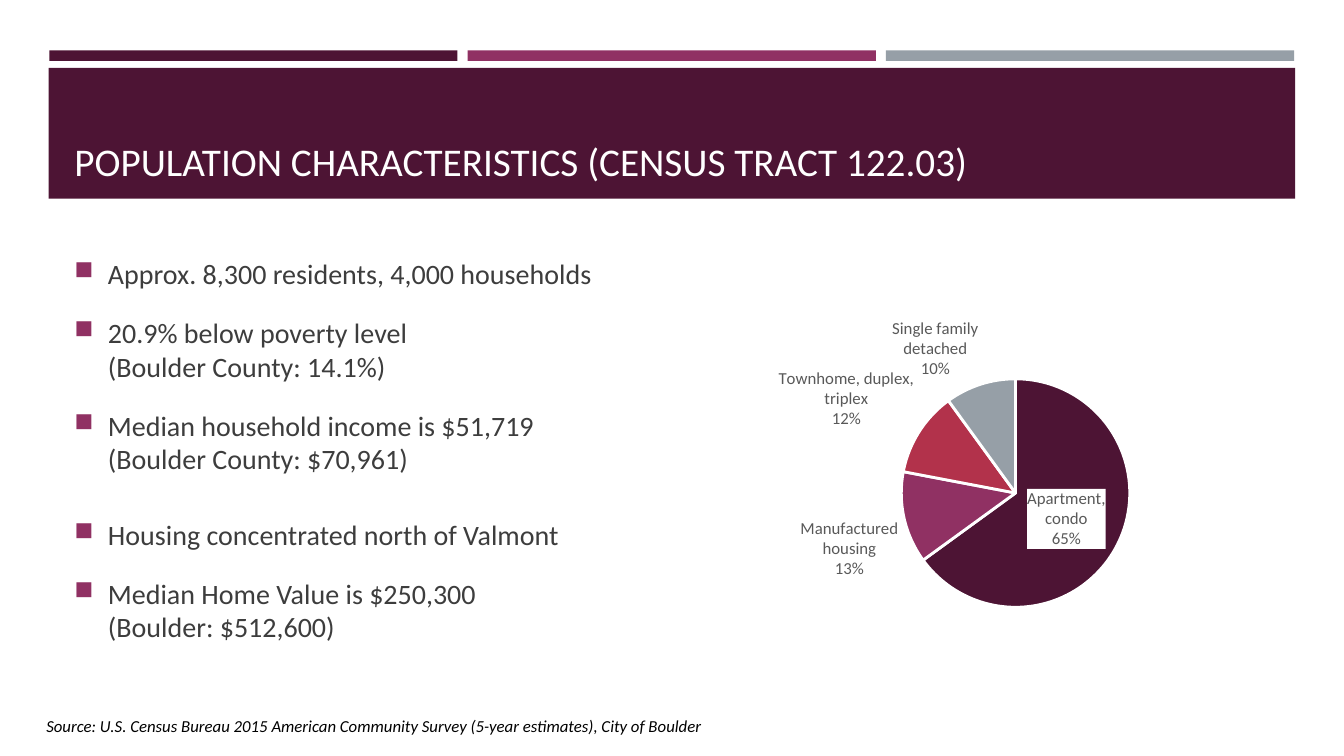
"""Build the population characteristics slide for one census tract."""
from dataclasses import dataclass

from lxml.etree import SubElement
from pptx import Presentation
from pptx.chart.data import CategoryChartData
from pptx.dml.color import RGBColor
from pptx.enum.chart import XL_CHART_TYPE, XL_LABEL_POSITION
from pptx.enum.shapes import MSO_SHAPE
from pptx.enum.text import MSO_ANCHOR
from pptx.oxml import parse_xml
from pptx.oxml.ns import nsdecls, qn
from pptx.util import Pt


@dataclass(frozen=True)
class Theme:
    font: str = "Calibri"
    plum: RGBColor = RGBColor(0x4D, 0x14, 0x34)
    magenta: RGBColor = RGBColor(0x90, 0x31, 0x63)
    red: RGBColor = RGBColor(0xB2, 0x32, 0x4B)
    grey: RGBColor = RGBColor(0x96, 0x9F, 0xA7)
    white: RGBColor = RGBColor(0xFF, 0xFF, 0xFF)
    black: RGBColor = RGBColor(0, 0, 0)
    body: RGBColor = RGBColor(0x3D, 0x3D, 0x3D)
    label: RGBColor = RGBColor(0x59, 0x59, 0x59)
    title_size: int = 28
    body_size: int = 20
    small_size: int = 12


class SlideBuilder:
    def __init__(self, slide, theme):
        self.slide = slide
        self.theme = theme

    def style(self, font, size, color, italic=False):
        font.name = self.theme.font
        font.size = Pt(size)
        font.color.rgb = color
        font.italic = italic

    def bar(self, left, top, width, height, color):
        bar = self.slide.shapes.add_shape(
            MSO_SHAPE.RECTANGLE, Pt(left), Pt(top), Pt(width), Pt(height))
        bar.shadow.inherit = False
        bar.fill.solid()
        bar.fill.fore_color.rgb = color
        bar.line.fill.background()

    def title(self, text, left, top, width, height):
        title = self.slide.shapes.title
        title.left, title.top = Pt(left), Pt(top)
        title.width, title.height = Pt(width), Pt(height)
        self.slide.shapes._spTree.append(title._element)
        title.text_frame.text = text
        title.text_frame.vertical_anchor = MSO_ANCHOR.BOTTOM
        heading = title.text_frame.paragraphs[0]
        heading.alignment = 1
        self.style(heading.font, self.theme.title_size, self.theme.white)

    def text_frame(self, left, top, width, height, anchor):
        frame = self.slide.shapes.add_textbox(
            Pt(left), Pt(top), Pt(width), Pt(height)).text_frame
        frame.word_wrap = True
        frame.vertical_anchor = anchor
        return frame

    def note(self, text, *place):
        note = self.text_frame(*place, MSO_ANCHOR.TOP).paragraphs[0]
        note.text = text
        self.style(note.font, self.theme.small_size, self.theme.black, italic=True)

    def bullets(self, items, *place):
        frame = self.text_frame(*place, MSO_ANCHOR.MIDDLE)
        for index, (text, space_before) in enumerate(items):
            item = frame.add_paragraph() if index else frame.paragraphs[0]
            item.text = text
            item.space_before, item.space_after = Pt(space_before), Pt(6)
            properties = item._p.get_or_add_pPr()
            properties.set("marL", str(Pt(24)))
            properties.set("indent", str(Pt(-24)))
            bullet_color = SubElement(properties, qn("a:buClr"))
            SubElement(bullet_color, qn("a:srgbClr"), val=str(self.theme.magenta))
            SubElement(properties, qn("a:buSzPct"), val="92000")
            SubElement(properties, qn("a:buChar"), char="■")
            self.style(item.font, self.theme.body_size, self.theme.body)

    def pie(self, slices, plot_box, *place):
        data = CategoryChartData(number_format="General")
        data.categories = [name for name, _, _ in slices]
        data.add_series("Series 1", [share for _, share, _ in slices])
        chart = self.slide.shapes.add_chart(
            XL_CHART_TYPE.PIE, *map(Pt, place), data).chart
        chart.has_legend = False
        chart.has_title = False
        self.style(chart.font, self.theme.small_size, self.theme.label)
        plot = chart.plots[0]
        plot.vary_by_categories = True
        self.place_plot(plot, plot_box)
        series = plot.series[0]
        for index, (_, _, color) in enumerate(slices):
            wedge = series.points[index].format
            wedge.fill.solid()
            wedge.fill.fore_color.rgb = color
            wedge.line.color.rgb = self.theme.white
            wedge.line.width = Pt(2)
        self.pie_labels(series)

    def place_plot(self, plot, plot_box):
        area = plot._element.getparent()
        for layout in area.findall(qn("c:layout")):
            area.remove(layout)
        layout = parse_xml(f"<c:layout {nsdecls('c')}/>")
        manual = SubElement(layout, qn("c:manualLayout"))
        settings = {"layoutTarget": "inner", "xMode": "edge", "yMode": "edge"}
        settings.update(zip("xywh", map(str, plot_box)))
        for name, value in settings.items():
            SubElement(manual, qn(f"c:{name}"), val=value)
        area.insert(0, layout)

    def pie_labels(self, series):
        labels = series.data_labels
        labels.number_format = "0%"
        labels.number_format_is_linked = False
        labels.position = XL_LABEL_POSITION.OUTSIDE_END
        self.style(labels.font, self.theme.small_size, self.theme.label)
        boxed = series.points[0].data_label
        self.style(boxed.font, self.theme.small_size, self.theme.label)
        boxed.position = XL_LABEL_POSITION.CENTER
        boxed_element = labels._element.find(qn("c:dLbl"))
        for old in boxed_element.findall(qn("c:spPr")):
            boxed_element.remove(old)
        text_properties = boxed_element.find(qn("c:txPr"))
        text_properties.addprevious(parse_xml(
            f'<c:numFmt {nsdecls("c")} formatCode="0%" sourceLinked="0"/>'))
        text_properties.addprevious(parse_xml(
            f'<c:spPr {nsdecls("c", "a")}><a:solidFill>'
            f'<a:srgbClr val="{self.theme.white}"/></a:solidFill></c:spPr>'))
        shown = {"showVal": "0", "showCatName": "1", "showPercent": "1"}
        for element in (labels._element, boxed_element):
            for name, value in shown.items():
                element.find(qn(f"c:{name}")).set("val", value)
            element.find(qn("c:showBubbleSize")).addnext(parse_xml(
                f"<c:separator {nsdecls('c')}>\n</c:separator>"))


def main():
    theme = Theme()
    deck = Presentation()
    deck.slide_width, deck.slide_height = Pt(960), Pt(540)
    builder = SlideBuilder(deck.slides.add_slide(deck.slide_layouts[5]), theme)

    for column, color in enumerate((theme.plum, theme.magenta, theme.grey)):
        builder.bar(35.2 + 298.8 * column, 36, 291.6, 7.5, color)
    builder.bar(34.8, 48.5, 890.4, 93.5, theme.plum)
    builder.title("POPULATION CHARACTERISTICS (CENSUS TRACT 122.03)",
                  46, 55.5, 868, 80)
    builder.bullets([
        ("Approx. 8,300 residents, 4,000 households", 0),
        ("20.9% below poverty level\v(Boulder County: 14.1%)", 12),
        ("Median household income is $51,719\v(Boulder County: $70,961)", 12),
        ("Housing concentrated north of Valmont", 24),
        ("Median Home Value is $250,300\v(Boulder: $512,600)", 12),
    ], 46, 165, 386, 313)
    builder.note("Source: U.S. Census Bureau 2015 American Community Survey "
                 "(5-year estimates), City of Boulder", 26, 507.5, 582, 21.5)
    builder.pie([
        ("Apartment, condo", 65, theme.plum),
        ("Manufactured housing", 13, theme.magenta),
        ("Townhome, duplex, triplex", 12, theme.red),
        ("Single family detached", 10, theme.grey),
    ], (0.38, 0.22, 0.32, 0.67), 450, 216, 510, 245.5)
    deck.save("out.pptx")


if __name__ == "__main__":
    main()
